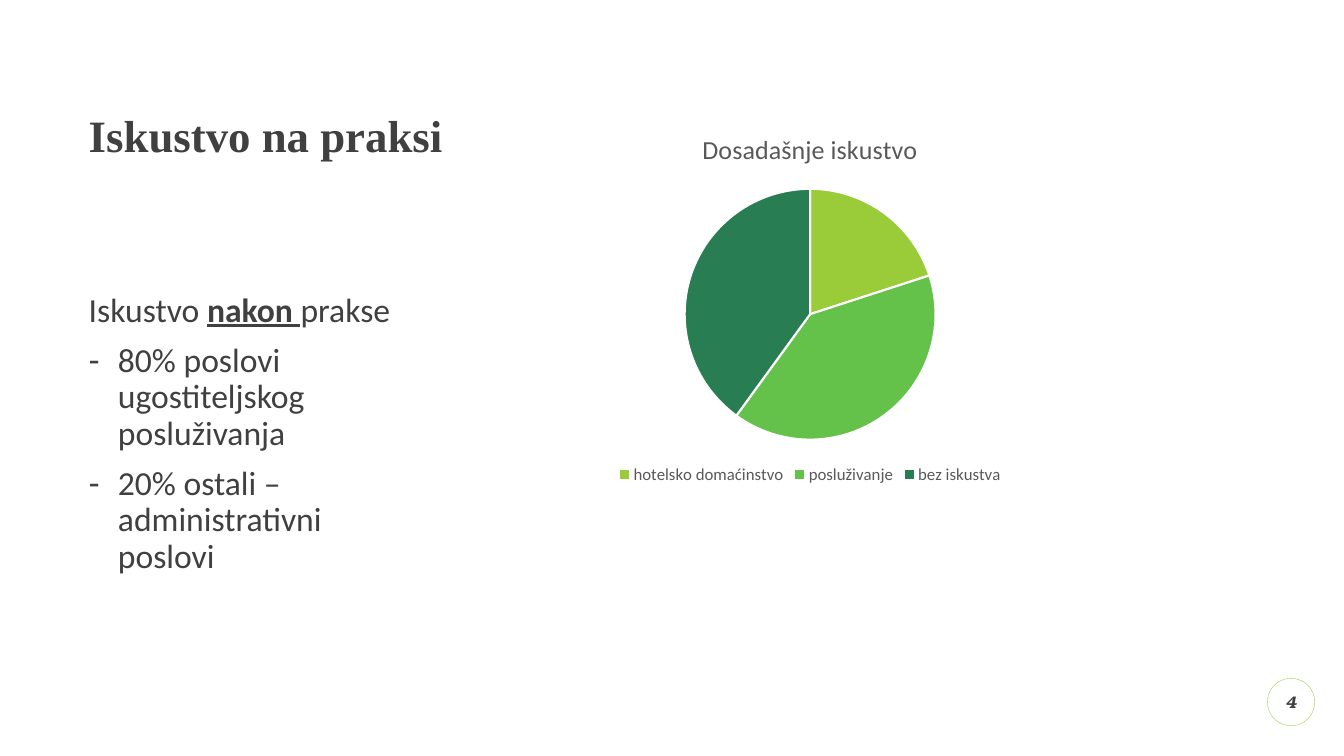
from lxml.etree import SubElement
from pptx import Presentation
from pptx.chart.data import CategoryChartData
from pptx.dml.color import RGBColor
from pptx.enum.chart import XL_CHART_TYPE, XL_LEGEND_POSITION
from pptx.enum.shapes import MSO_SHAPE
from pptx.enum.text import MSO_ANCHOR, MSO_AUTO_SIZE, PP_ALIGN
from pptx.oxml.ns import qn
from pptx.util import Inches, Pt

DARK, GREY, WHITE = "404040", "595959", "FFFFFF"
GREENS = ["9ACB39", "64C24A", "297D53"]


def color(code):
    return RGBColor.from_string(code)


def style(font, name, size, code, bold=False, italic=False):
    font.name, font.size = name, Pt(size)
    font.bold, font.italic = bold, italic
    font.color.rgb = color(code)


def place(shape, left, top, width, height, anchor):
    shape.left, shape.top = Inches(left), Inches(top)
    shape.width, shape.height = Inches(width), Inches(height)
    frame = shape.text_frame
    frame.margin_left = frame.margin_right = 0
    frame.margin_top = frame.margin_bottom = 0
    frame.vertical_anchor = anchor
    frame.word_wrap = True
    frame.auto_size = MSO_AUTO_SIZE.NONE
    return frame


def add_title(slide, text):
    frame = place(slide.shapes.title, 0.88, 1.13, 11.79, 0.47, MSO_ANCHOR.MIDDLE)
    frame.text = text
    para = frame.paragraphs[0]
    para.alignment = PP_ALIGN.LEFT
    para.line_spacing = 0.9
    style(para.runs[0].font, "Times New Roman", 32, DARK, bold=True)


def set_bullet(para, mark, indent):
    props = para._p.get_or_add_pPr()
    props.set("marL", str(Inches(indent)))
    props.set("indent", str(-Inches(indent)))
    if mark:
        SubElement(props, qn("a:buChar"), char=mark)
    else:
        SubElement(props, qn("a:buNone"))


def add_list(slide, lead, items):
    """Fill the body with a lead of (text, stressed) parts and dashed items."""
    frame = place(slide.placeholders[1], 0.88, 2.91, 3.23, 3.38, MSO_ANCHOR.TOP)
    rows = [(lead, None, 0)] + [([(item, False)], "-", 0.29) for item in items]
    for index, (parts, mark, indent) in enumerate(rows):
        para = frame.add_paragraph() if index else frame.paragraphs[0]
        para.line_spacing = 0.9
        para.space_before = Pt(10)
        set_bullet(para, mark, indent)
        for text, stress in parts:
            run = para.add_run()
            run.text = text
            style(run.font, "Calibri", 24, DARK, bold=stress)
            run.font.underline = stress


def add_badge(slide, text):
    badge = slide.shapes.add_shape(MSO_SHAPE.OVAL, 0, 0, 0, 0)
    frame = place(badge, 12.57, 6.73, 0.47, 0.47, MSO_ANCHOR.MIDDLE)
    badge.shadow.inherit = False
    badge.fill.background()
    badge.line.color.rgb = color(GREENS[0])
    badge.line.width = Pt(0.25)
    frame.text = text
    para = frame.paragraphs[0]
    para.alignment = PP_ALIGN.CENTER
    style(para.runs[0].font, "TeX Gyre Bonum", 12, DARK, bold=True, italic=True)


def add_pie(slide, title, shares):
    data = CategoryChartData()
    data.categories = list(shares)
    data.add_series("Series 1", list(shares.values()))
    chart = slide.shapes.add_chart(
        XL_CHART_TYPE.PIE, Inches(5.13), Inches(1.13), Inches(5.81), Inches(3.72), data
    ).chart
    style(chart.font, "Calibri", 10, "000000")
    chart.has_title = True
    frame = chart.chart_title.text_frame
    frame.text = title
    style(frame.paragraphs[0].runs[0].font, "Calibri", 18.6, GREY)
    chart.has_legend = True
    chart.legend.position = XL_LEGEND_POSITION.BOTTOM
    chart.legend.include_in_layout = False
    style(chart.legend.font, "Calibri", 12, GREY)
    plot = chart.plots[0]
    plot.vary_by_categories = True
    for index, code in enumerate(GREENS):
        form = plot.series[0].points[index].format
        form.fill.solid()
        form.fill.fore_color.rgb = color(code)
        form.line.color.rgb = color(WHITE)
        form.line.width = Pt(1.5)


def main():
    deck = Presentation()
    deck.slide_width, deck.slide_height = Inches(13.33), Inches(7.5)
    slide = deck.slides.add_slide(deck.slide_layouts[1])
    add_title(slide, "Iskustvo na praksi")
    add_list(
        slide,
        [("Iskustvo ", False), ("nakon ", True), ("prakse", False)],
        ["80% poslovi ugostiteljskog posluživanja", "20% ostali – administrativni poslovi"],
    )
    add_badge(slide, "4")
    add_pie(
        slide,
        "Dosadašnje iskustvo",
        {"hotelsko domaćinstvo": 20, "posluživanje": 40, "bez iskustva": 40},
    )
    deck.save("out.pptx")


if __name__ == "__main__":
    main()
